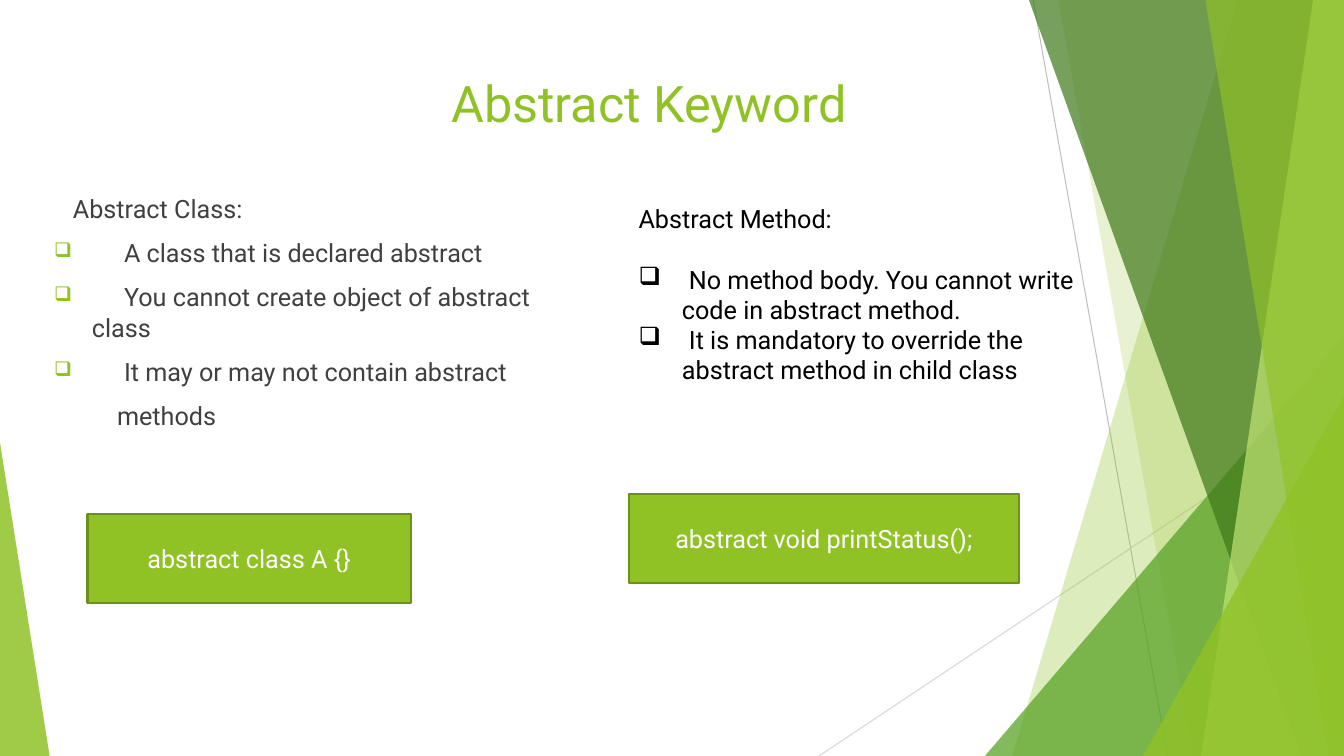
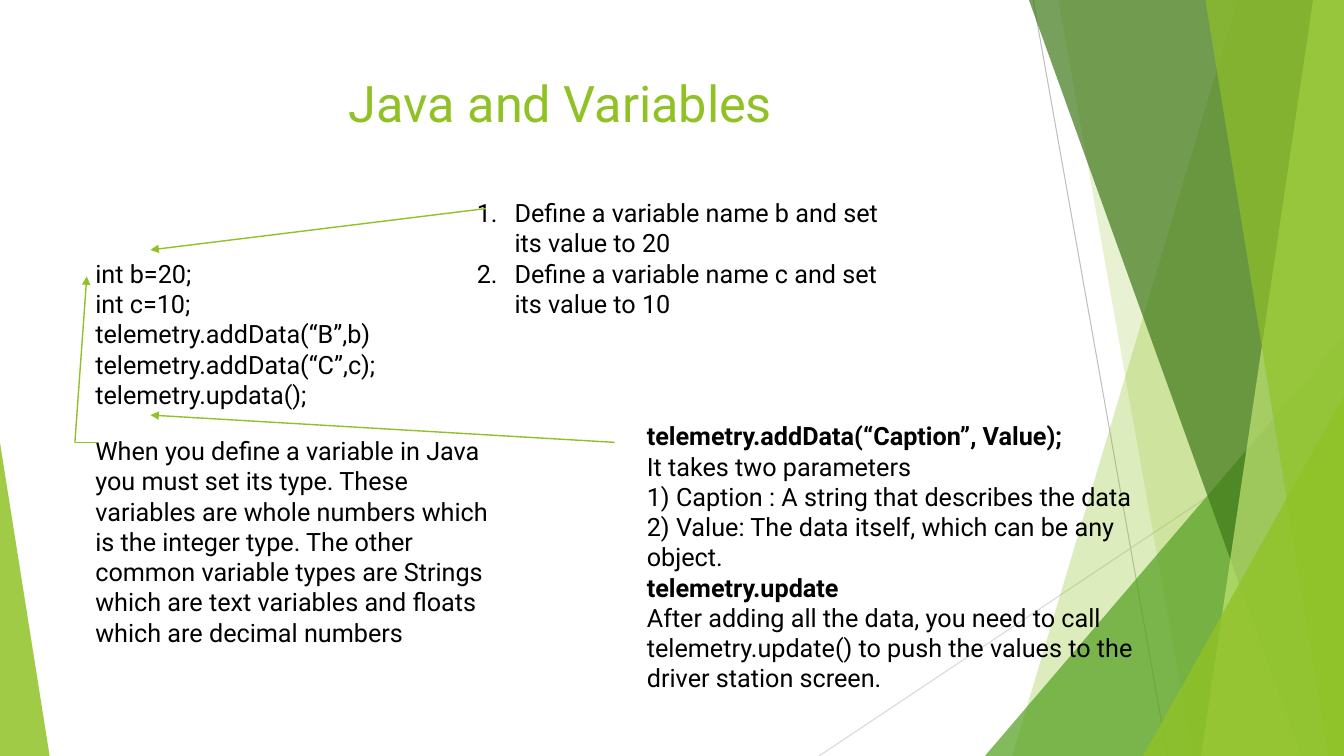
from lxml.etree import SubElement
from pptx import Presentation
from pptx.dml.color import RGBColor
from pptx.enum.shapes import MSO_CONNECTOR as Connector, MSO_SHAPE as Shape
from pptx.enum.text import MSO_ANCHOR as Anchor, PP_ALIGN as Align
from pptx.oxml.ns import qn
from pptx.util import Pt

GREEN = RGBColor(0x90, 0xC2, 0x26)
MID_GREEN = RGBColor(0x54, 0xA0, 0x21)
DARK_GREEN = RGBColor(0x3F, 0x78, 0x19)
PALE_GREEN = RGBColor(0xC0, 0xE4, 0x74)
EDGE_GREEN = RGBColor(0x6B, 0x90, 0x1C)
GREY = RGBColor(0xBF, 0xBF, 0xBF)
LIGHT_GREY = RGBColor(0xD9, 0xD9, 0xD9)
CHARCOAL = RGBColor(0x40, 0x40, 0x40)
BLACK = RGBColor(0, 0, 0)
WHITE = RGBColor(255, 255, 255)
FONT = "Roboto"
WIDTH, HEIGHT = 960, 540


def write(frame, paragraphs, color=BLACK, size=18, align=Align.LEFT):
    """Fill a frame with (text, format) pairs; bullet holds XML tags and attributes."""
    frame.word_wrap = True
    for number, (text, look) in enumerate(paragraphs):
        line = frame.add_paragraph() if number else frame.paragraphs[0]
        line.text = text
        line.alignment = align
        line.space_before = Pt(look.get("before", 0))
        font_look = {"name": FONT, "size": Pt(size), "bold": look.get("bold", False)}
        for key, value in font_look.items():
            setattr(line.runs[0].font, key, value)
        line.runs[0].font.color.rgb = color
        properties = line.runs[0]._r.getparent().get_or_add_pPr()
        properties.set("marL", str(Pt(look.get("margin", 0))))
        properties.set("indent", str(Pt(look.get("indent", 0))))
        for tag, attributes in look.get("bullet", {}).items():
            mark = SubElement(properties, qn(tag), attributes)
            if tag == "a:buClr":
                SubElement(mark, qn("a:srgbClr"), val=str(GREEN))


def draw_line(slide, start, end, color, width, arrow=False):
    line = slide.shapes.add_connector(Connector.STRAIGHT, *map(Pt, start + end))
    line.line.color.rgb = color
    line.line.width = Pt(width)
    if arrow:
        SubElement(line.line._get_or_add_ln(), qn("a:tailEnd"), type="triangle")
    SubElement(line.element.spPr, qn("a:effectLst"))


deck = Presentation()
deck.slide_width, deck.slide_height = Pt(WIDTH), Pt(HEIGHT)
blank = deck.slide_layouts[6]
for placeholder in list(blank.placeholders):
    placeholder.element.getparent().remove(placeholder.element)

# Shared backdrop: drawn once, then moved to the layout
keyword_slide = deck.slides.add_slide(blank)
draw_line(keyword_slide, (738, 0), (834, HEIGHT), GREY, 0.75)
draw_line(keyword_slide, (WIDTH, 290), (585, HEIGHT), LIGHT_GREY, 0.75)

# A band runs to the right edge: (top x, bottom x)
# A wedge stands on the bottom edge: (left, top, width, tip)
backdrop = [
    ("band", (884, 723), GREEN, 30),
    ("band", (756, 852), GREEN, 20),
    ("wedge", (703.5, 240, 256.5, 1), MID_GREEN, 72),
    ("band", (735, 929.5), DARK_GREEN, 70),
    ("band", (938, 858), PALE_GREEN, 70),
    ("band", (861, 949), GREEN, 65),
    ("wedge", (816.5, 283, 143.5, 1), GREEN, 80),
    ("wedge", (0, 316, 35.5, 0), GREEN, 85),
]
for kind, geometry, color, opacity in backdrop:
    if kind == "band":
        top_x, bottom_x = geometry
        outline = keyword_slide.shapes.build_freeform(Pt(top_x), 0)
        corners = [(WIDTH, 0), (WIDTH, HEIGHT), (bottom_x, HEIGHT)]
        outline.add_line_segments([(Pt(x), Pt(y)) for x, y in corners], close=True)
        facet = outline.convert_to_shape()
    else:
        left, top, width, tip = geometry
        facet = keyword_slide.shapes.add_shape(
            Shape.ISOSCELES_TRIANGLE, Pt(left), Pt(top), Pt(width), Pt(HEIGHT - top))
        facet.adjustments[0] = tip
    facet.shadow.inherit = False
    facet.line.fill.background()
    facet.fill.solid()
    facet.fill.fore_color.rgb = color
    tint = facet.element.spPr.find(".//" + qn("a:srgbClr"))
    SubElement(tint, qn("a:alpha"), val=str(opacity * 1000))

for part in list(keyword_slide.shapes):
    blank.shapes.element.append(part.element)
variables_slide = deck.slides.add_slide(blank)

# Titles
for slide, left, title in [(keyword_slide, 125, "Abstract Keyword"),
                           (variables_slide, 62, "Java and Variables")]:
    heading = slide.shapes.add_textbox(Pt(left), Pt(48), Pt(677), Pt(60))
    write(heading.text_frame, [(title, {})], GREEN, 36, Align.CENTER)

# Text columns
box = {"a:buChar": {"char": "❑"}}
green_box = {"a:buClr": {}, "a:buSzPct": {"val": "80000"}, **box}
number = {"a:buAutoNum": {"type": "arabicPeriod"}}
class_item = {"margin": 50, "indent": -50, "before": 10, "bullet": green_box}
method_item = {"margin": 36, "indent": -36, "bullet": box}
step = {"margin": 27, "indent": -27, "bullet": number}
bold = {"bold": True}

columns = [
    (keyword_slide, (31.5, 134.5, 392, 210), CHARCOAL, [
        ("Abstract Class:", {"margin": 13.5}),
        ("A class that is declared abstract", class_item),
        ("You cannot create object of abstract", class_item),
        ("class", {"margin": 27}),
        ("It may or may not contain abstract", class_item),
        ("methods", {"margin": 45, "before": 10}),
    ]),
    (keyword_slide, (449, 142, 367, 160), BLACK, [
        ("Abstract Method:", {}),
        ("No method body. You cannot write", {**method_item, "before": 21.5}),
        ("code in abstract method.", {"margin": 31}),
        ("It is mandatory to override the", method_item),
        ("abstract method in child class", {"margin": 31}),
    ]),
    (variables_slide, (61, 181, 240, 117), BLACK, [
        ("int b=20;", {}),
        ("int c=10;", {}),
        ("telemetry.addData(“B”,b)", {}),
        ("telemetry.addData(“C”,c);", {}),
        ("telemetry.updata();", {}),
    ]),
    (variables_slide, (333.5, 137.5, 324, 94), BLACK, [
        ("Define a variable name b and set its value to 20", step),
        ("Define a variable name c and set its value to 10", step),
    ]),
    (variables_slide, (61, 307.5, 303, 160), BLACK, [
        ("When you define a variable in Java you must set its type. These variables "
         "are whole numbers which is the integer type. The other common variable types "
         "are Strings which are text variables and floats which are decimal numbers", {}),
    ]),
    (variables_slide, (455, 297, 371, 204), BLACK, [
        ("telemetry.addData(“Caption”, Value);", bold),
        ("It takes two parameters", {}),
        ("1) Caption : A string that describes the data", {}),
        ("2) Value: The data itself, which can be any object.", {}),
        ("telemetry.update", bold),
        ("After adding all the data, you need to call", {}),
        ("telemetry.update() to push the values to the driver station screen.", {}),
    ]),
]
for slide, place, color, paragraphs in columns:
    column = slide.shapes.add_textbox(*map(Pt, place))
    write(column.text_frame, paragraphs, color)

# Code samples
for left, top, width, code in [(62.5, 367, 231, "abstract class A {}"),
                               (449, 353, 279, "abstract void printStatus();")]:
    sample = keyword_slide.shapes.add_shape(
        Shape.RECTANGLE, Pt(left), Pt(top), Pt(width), Pt(63.5))
    sample.shadow.inherit = False
    sample.fill.solid()
    sample.fill.fore_color.rgb = GREEN
    sample.line.color.rgb = EDGE_GREEN
    sample.line.width = Pt(1.5)
    sample.text_frame.vertical_anchor = Anchor.MIDDLE
    write(sample.text_frame, [(code, {})], WHITE, align=Align.CENTER)

# Pointers from the explanations to the code
for start, end, arrow in [
    ((347, 149), (107.5, 178.5), True),
    ((71, 316), (53.5, 316), False),
    ((53.5, 316), (62, 197.5), True),
    ((439, 316), (107.5, 296.5), True),
]:
    draw_line(variables_slide, start, end, GREEN, 1, arrow)

deck.save("out.pptx")
